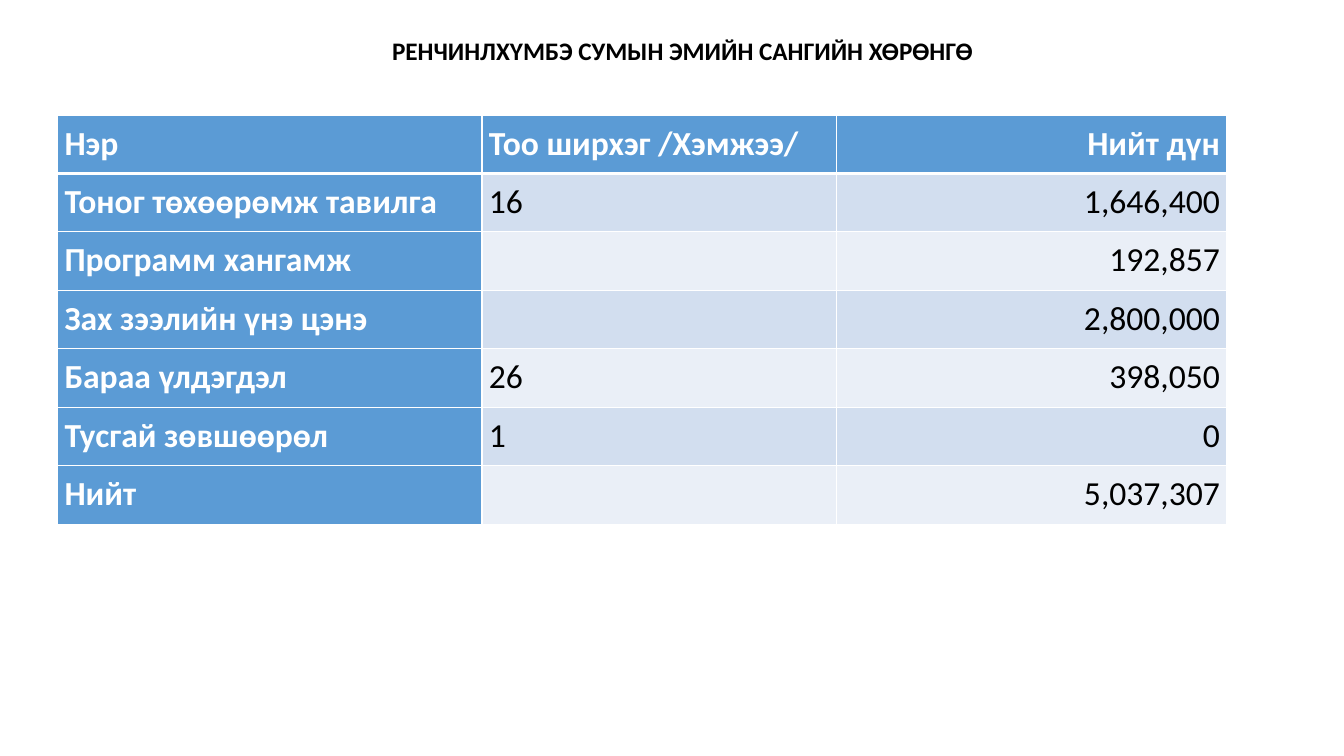
"""Build the slide listing the assets of the Renchinlkhumbe pharmacy."""
from dataclasses import dataclass

from lxml.etree import SubElement
from pptx import Presentation
from pptx.dml.color import RGBColor
from pptx.enum.text import MSO_ANCHOR as Anchor, PP_ALIGN as Align
from pptx.oxml.ns import qn
from pptx.util import Inches, Pt


@dataclass(frozen=True)
class Theme:
    font: str = "Calibri"
    title_size: int = 18
    table_size: int = 24
    dark: str = "000000"
    light: str = "FFFFFF"
    header: str = "5B9BD5"
    bands: tuple = ("D2DEEF", "EAEFF7")


theme = Theme()


def add_span(para, text, size, color, bold):
    span = para.add_run()
    span.text = text
    span.font.name = theme.font
    span.font.size = Pt(size)
    span.font.bold = bold
    span.font.color.rgb = RGBColor.from_string(color)


def add_border(cell, side, points):
    line = SubElement(cell._tc.get_or_add_tcPr(), qn(f"a:ln{side}"), w=str(Pt(points)))
    fill = SubElement(line, qn("a:solidFill"))
    SubElement(fill, qn("a:srgbClr"), val=theme.light)


deck = Presentation()
deck.slide_width = Inches(13.33)
deck.slide_height = Inches(7.5)
page = deck.slides.add_slide(deck.slide_layouts[5])

title = page.shapes.title
title.left, title.top = Inches(1.77), Inches(0.33)
title.width, title.height = Inches(10), Inches(0.56)
title.text_frame.word_wrap = True
title.text_frame.vertical_anchor = Anchor.TOP
para = title.text_frame.paragraphs[0]
para.alignment = Align.CENTER
para.line_spacing = 0.9
add_span(para, "РЕНЧИНЛХҮМБЭ СУМЫН ЭМИЙН САНГИЙН ХӨРӨНГӨ",
         theme.title_size, theme.dark, True)

assets = [
    ("Нэр", "Тоо ширхэг /Хэмжээ/", "Нийт дүн"),
    ("Тоног төхөөрөмж тавилга", "16", "1,646,400"),
    ("Программ хангамж", "", "192,857"),
    ("Зах зээлийн үнэ цэнэ", "", "2,800,000"),
    ("Бараа үлдэгдэл", "26", "398,050"),
    ("Тусгай зөвшөөрөл", "1", "0"),
    ("Нийт", "", "5,037,307"),
]
column_widths = (4.21, 3.52, 3.87)
alignments = (Align.LEFT, Align.LEFT, Align.RIGHT)

table = page.shapes.add_table(len(assets), len(column_widths), Inches(0.57), Inches(1.14),
                              Inches(sum(column_widths)), Inches(4.05)).table
table.first_col = True
for column, width in zip(table.columns, column_widths):
    column.width = Inches(width)

for row_index, values in enumerate(assets):
    table.rows[row_index].height = Inches(0.58)
    for column_index, text in enumerate(values):
        cell = table.cell(row_index, column_index)
        is_header = row_index == 0 or column_index == 0
        cell.margin_left = cell.margin_right = Inches(0.07)
        cell.margin_top = cell.margin_bottom = 0
        add_border(cell, "L", 1)
        add_border(cell, "R", 1)
        add_border(cell, "T", 3 if row_index == 1 else 1)
        add_border(cell, "B", 3 if row_index == 0 else 1)
        cell.fill.solid()
        band = theme.bands[(row_index - 1) % 2]
        cell.fill.fore_color.rgb = RGBColor.from_string(theme.header if is_header else band)
        if text:
            para = cell.text_frame.paragraphs[0]
            para.alignment = alignments[column_index]
            para.line_spacing = 1.2
            para.space_before = Pt(3)
            add_span(para, text, theme.table_size,
                     theme.light if is_header else theme.dark, is_header)

deck.save("out.pptx")
